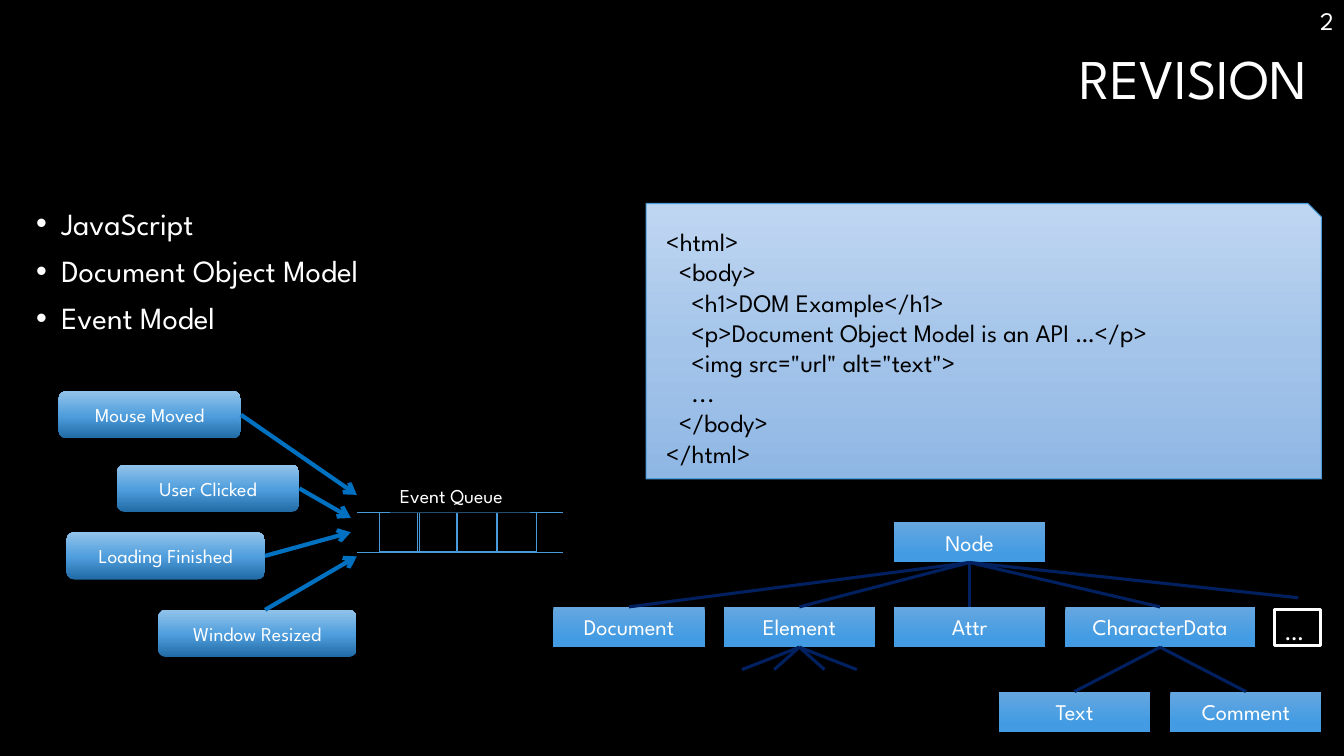
from lxml.etree import SubElement
from pptx import Presentation
from pptx.dml.color import RGBColor
from pptx.enum.shapes import MSO_CONNECTOR as Link, MSO_SHAPE as Preset
from pptx.enum.text import MSO_ANCHOR as Anchor, PP_ALIGN as Align
from pptx.oxml.ns import qn
from pptx.util import Pt

FONT = "League Spartan"
COLORS = {"back": "000000", "text": "FFFFFF", "code": "000000", "edge": "4A9BDC",
          "branch": "002060", "arrow": "0070C0"}
CODE_FILL = 90, [(0, "BFD6F2"), (52, "A4C4E9"), (100, "8FB7E4")]
NODE_FILL = 90, [(0, "66A7E0"), (78, "439CE3")]
EVENT_FILL = 270, [(0, "206AA5"), (48, "4F9EDD"), (100, "92C3EA")]

TITLE = "REVISION"
PAGE_NUMBER = "2"
TOPICS = ["JavaScript", "Document Object Model", "Event Model"]
CODE = [  # nesting depth, line
    (0, "<html>"), (1, "<body>"), (2, "<h1>DOM Example</h1>"),
    (2, "<p>Document Object Model is an API …</p>"),
    (2, '<img src="url" alt="text">'), (2, "..."), (1, "</body>"), (0, "</html>"),
]
NODES = {  # name: (left, row, width, parent)
    "Node": (638.6, 0, 108, None),
    "Document": (395.3, 1, 108, "Node"),
    "Element": (517, 1, 108, "Node"),
    "Attr": (638.6, 1, 108, "Node"),
    "CharacterData": (761, 1, 135.4, "Node"),
    "Text": (713.5, 2, 108, "CharacterData"),
    "Comment": (836, 2, 108, "CharacterData"),
}
NODE_TOP, ROW_PITCH, NODE_HEIGHT = 373, 60.5, 28.8
MORE_NODES_END = (927.4, 427)
STUB_OFFSETS, STUB_DROP = [-41, -18, 18, 41], 16

EVENT_HEIGHT = 33.8
EVENTS = [  # name, left, top, width, arrow start (None: middle of right side), arrow end
    ("Mouse Moved", 41.8, 279.4, 130.3, None, (254.9, 353.5)),
    ("User Clicked", 83.5, 332, 130.3, None, (250.6, 370)),
    ("Loading Finished", 47.5, 380.2, 141.8, None, (250.6, 380.2)),
    ("Window Resized", 113, 435.6, 141.8, (189.4, 435.6), (254.9, 397.4)),
]
QUEUE_TOP, QUEUE_BOTTOM, QUEUE_LEFT, QUEUE_RIGHT = 365.8, 394.6, 254.9, 402
CELL_LEFTS, CELL_SIZE = [271.4, 298.1, 326.9, 355], 28.1


def color(name):
    return RGBColor.from_string(COLORS[name])


def write(shape, lines, size, ink="text", align=Align.LEFT, anchor=Anchor.TOP, wrap=True):
    frame = shape.text_frame
    frame.text = "\n".join(lines)
    frame.word_wrap = wrap
    frame.vertical_anchor = anchor
    for para in frame.paragraphs:
        para.alignment = align
        for span in para.runs:
            span.font.name, span.font.size = FONT, Pt(size)
            span.font.color.rgb = color(ink)
    return frame


def add_box(page, preset, left, top, width, height, gradient=None, edge=None):
    box = page.shapes.add_shape(preset, Pt(left), Pt(top), Pt(width), Pt(height))
    box.shadow.inherit = False
    box.fill.background()
    if gradient:
        set_gradient(box, *gradient)
    if edge:
        box.line.color.rgb, box.line.width = color(edge), Pt(0.75)
    else:
        box.line.fill.background()
    return box


def set_gradient(box, angle, stops):
    """Replace the empty fill of the box with a linear gradient of any number of stops."""
    props = box._element.spPr
    empty = props.find(qn("a:noFill"))
    grad = SubElement(props, qn("a:gradFill"), rotWithShape="1")
    props.replace(empty, grad)
    stop_list = SubElement(grad, qn("a:gsLst"))
    for position, value in stops:
        stop = SubElement(stop_list, qn("a:gs"), pos=str(position * 1000))
        SubElement(stop, qn("a:srgbClr"), val=value)
    SubElement(grad, qn("a:lin"), ang=str(angle * 60000), scaled="0")


def add_text(page, left, top, width, height):
    return page.shapes.add_textbox(Pt(left), Pt(top), Pt(width), Pt(height))


def add_line(page, start, end, ink, weight, head=False):
    line = page.shapes.add_connector(Link.STRAIGHT, *map(Pt, (*start, *end)))
    line.line.color.rgb, line.line.width = color(ink), Pt(weight)
    if head:
        SubElement(line.line._get_or_add_ln(), qn("a:tailEnd"), type="arrow")
    SubElement(line._element.spPr, qn("a:effectLst"))
    return line


def add_heading(page):
    title = page.shapes.title
    title.left, title.top, title.width, title.height = map(Pt, (18.7, 33.1, 922.3, 101.5))
    write(title, [TITLE], 40, align=Align.RIGHT).paragraphs[0].line_spacing = 0.9
    write(add_text(page, 752.4, 0, 207.4, 28.8), [PAGE_NUMBER], 18, align=Align.RIGHT)


def add_topics(page):
    frame = write(add_text(page, 18.7, 145.4, 460.8, 196.6), TOPICS, 22)
    for para in frame.paragraphs:
        para.line_spacing, para.space_before = 0.9, Pt(10)
        props = para._p.get_or_add_pPr()
        props.set("marL", str(Pt(18)))
        props.set("indent", str(Pt(-18)))
        SubElement(props, qn("a:buFont"), typeface="Arial")
        SubElement(props, qn("a:buChar"), char="•")


def add_code(page):
    panel = add_box(page, Preset.SNIP_1_RECTANGLE, 461.5, 145.4, 482.4, 196.6, CODE_FILL, "edge")
    panel.adjustments[0] = 0.049
    frame = write(panel, [line for _, line in CODE], 18, "code")
    frame.margin_left = frame.margin_right = frame.margin_bottom = Pt(14.4)
    frame.margin_top = Pt(11.5)
    for para, (depth, _) in zip(frame.paragraphs, CODE):
        para._p.get_or_add_pPr().set("marL", str(Pt(9 * depth)))


def add_tree(page):
    boxes = {}
    for name, (left, row, width, _) in NODES.items():
        top = NODE_TOP + row * ROW_PITCH
        boxes[name] = add_box(page, Preset.RECTANGLE, left, top, width, NODE_HEIGHT, NODE_FILL)
        write(boxes[name], [name], 16, align=Align.CENTER, anchor=Anchor.MIDDLE)
    more = add_text(page, 910.6, 435.6, 32.6, 25.2)
    more.line.color.rgb, more.line.width = color("text"), Pt(2.25)
    write(more, ["…"], 18, wrap=False)

    for name, (*_, parent) in NODES.items():
        if parent:
            branch = add_line(page, (0, 0), (0, 0), "branch", 2.25)
            branch.begin_connect(boxes[parent], 2)
            branch.end_connect(boxes[name], 0)
    ends = [("Node", MORE_NODES_END)]
    left, row, width, _ = NODES["Element"]
    stub_end = NODE_TOP + row * ROW_PITCH + NODE_HEIGHT + STUB_DROP
    ends += [("Element", (left + width / 2 + offset, stub_end)) for offset in STUB_OFFSETS]
    for name, end in ends:
        add_line(page, end, end, "branch", 2.25).begin_connect(boxes[name], 2)


def add_queue(page):
    for left in CELL_LEFTS:
        add_box(page, Preset.RECTANGLE, left, QUEUE_TOP, CELL_SIZE, CELL_SIZE, edge="edge")
    for y in (QUEUE_TOP, QUEUE_BOTTOM):
        add_line(page, (QUEUE_LEFT, y), (QUEUE_RIGHT, y), "edge", 0.75)
    label = add_text(page, 278.6, 342, 100.1, 24.5)
    label.fill.solid()
    label.fill.fore_color.rgb = color("back")
    tint = label._element.spPr.find(qn("a:solidFill")).find(qn("a:srgbClr"))
    SubElement(tint, qn("a:alpha"), val="50000")
    write(label, ["Event Queue"], 14, wrap=False)


def add_events(page):
    for name, left, top, width, start, end in EVENTS:
        box = add_box(page, Preset.ROUNDED_RECTANGLE, left, top, width, EVENT_HEIGHT, EVENT_FILL)
        write(box, [name], 14, align=Align.CENTER, anchor=Anchor.MIDDLE)
        arrow = add_line(page, start or end, end, "arrow", 3, head=True)
        if start is None:
            arrow.begin_connect(box, 3)


def main():
    deck = Presentation()
    deck.slide_width, deck.slide_height = Pt(960), Pt(540)
    page = deck.slides.add_slide(deck.slide_layouts[5])
    page.background.fill.solid()
    page.background.fill.fore_color.rgb = color("back")
    for add_part in (add_heading, add_topics, add_code, add_tree, add_queue, add_events):
        add_part(page)
    deck.save("out.pptx")


if __name__ == "__main__":
    main()
